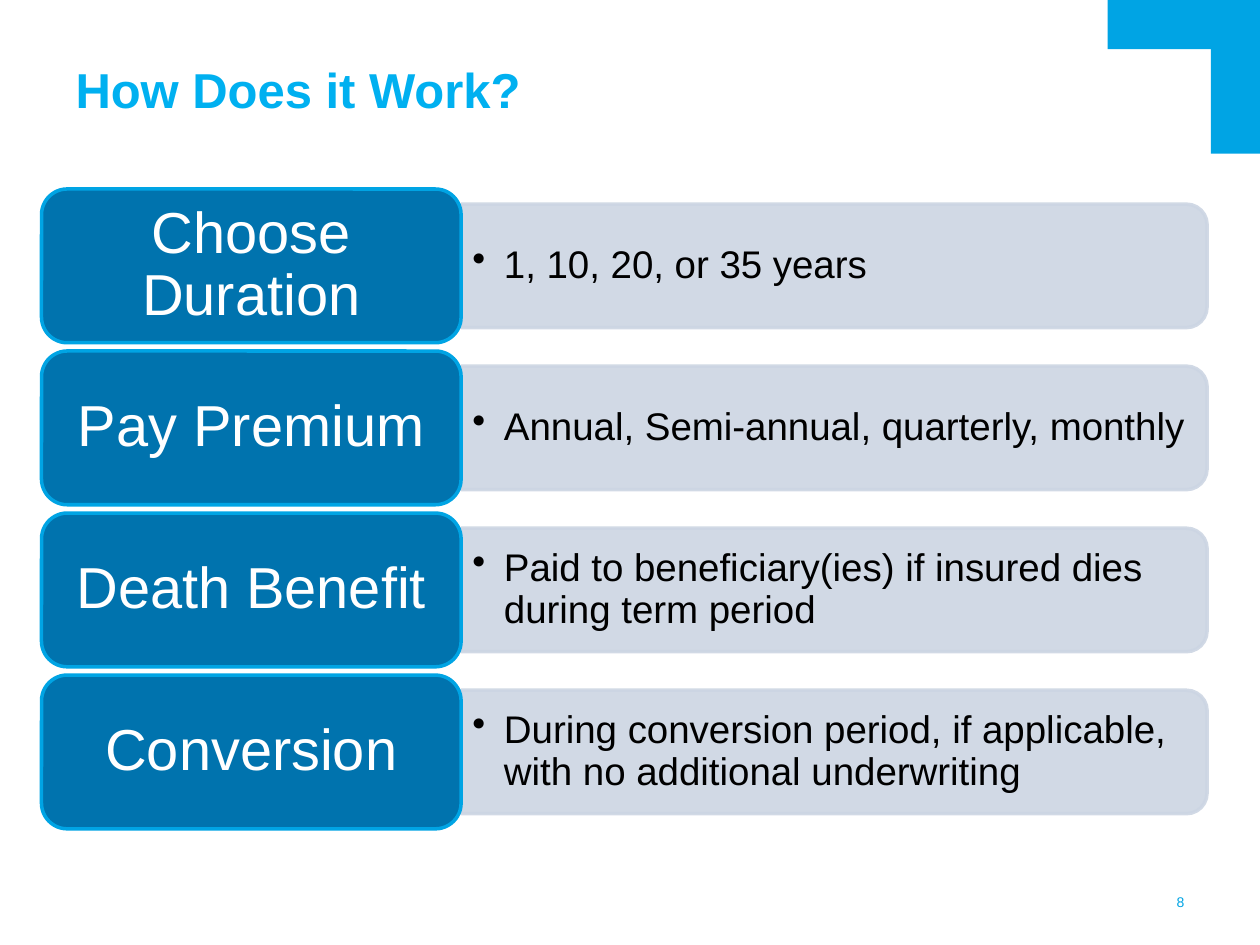
from lxml.etree import SubElement
from pptx import Presentation
from pptx.dml.color import RGBColor
from pptx.enum.shapes import MSO_SHAPE
from pptx.enum.text import MSO_ANCHOR, PP_ALIGN
from pptx.oxml.ns import qn
from pptx.util import Inches, Pt


def paint(shape, fill, line=None, opacity=None):
    """Set fill and outline; opacity is a percentage applied to both."""
    shape.shadow.inherit = False
    shape.fill.solid()
    shape.fill.fore_color.rgb = RGBColor.from_string(fill)
    if line:
        shape.line.color.rgb = RGBColor.from_string(line)
        shape.line.width = Pt(2)
    else:
        shape.line.fill.background()
    if opacity:
        for color in shape._element.spPr.iter(qn("a:srgbClr")):
            SubElement(color, qn("a:alpha"), val=str(opacity * 1000))


def write(shape, text, size, color, anchor=MSO_ANCHOR.MIDDLE,
          align=PP_ALIGN.LEFT, inset=(0, 0), wrap=True):
    """Fill the shape with one paragraph; inset is (horizontal, vertical) in inches."""
    frame = shape.text_frame
    frame.text = text
    frame.word_wrap = wrap
    frame.vertical_anchor = anchor
    frame.margin_left = frame.margin_right = Inches(inset[0])
    frame.margin_top = frame.margin_bottom = Inches(inset[1])
    paragraph = frame.paragraphs[0]
    paragraph.alignment = align
    font = paragraph.runs[0].font
    font.name = "Arial"
    font.size = Pt(size)
    font.color.rgb = RGBColor.from_string(color)
    return paragraph


presentation = Presentation()
presentation.slide_width = Inches(10)
presentation.slide_height = Inches(7.5)
slide = presentation.slides.add_slide(presentation.slide_layouts[6])
shapes = slide.shapes

# Corner ornament
for left, width, height in ((8.79, 1.21, 0.39), (9.61, 0.39, 1.22)):
    corner = shapes.add_shape(MSO_SHAPE.RECTANGLE, Inches(left), 0,
                              Inches(width), Inches(height))
    paint(corner, "00A4E4")

# Title and page number
title = shapes.add_textbox(Inches(0.6), Inches(0.6), Inches(8.8), Inches(0.34))
paragraph = write(title, "How Does it Work?", 28, "00B0F0",
                  anchor=MSO_ANCHOR.BOTTOM, wrap=False)
paragraph.runs[0].font.bold = True

page_number = shapes.add_textbox(Inches(9.09), Inches(7.09), Inches(0.31), Inches(0.14))
write(page_number, "8", 8, "00A4E4", align=PP_ALIGN.RIGHT)

# Steps: a label on the left, its detail in a bar on the right
steps = [
    ("Choose Duration", "1, 10, 20, or 35 years"),
    ("Pay Premium", "Annual, Semi-annual, quarterly, monthly"),
    ("Death Benefit", "Paid to beneficiary(ies) if insured dies during term period"),
    ("Conversion", "During conversion period, if applicable, "
                   "with no additional underwriting"),
]
first_top, row_pitch = 1.5, 1.286
label_left, label_width, label_height = 0.33, 3.33, 1.22
bar_left = label_left + label_width
bar_length, bar_height = 5.92, 0.98
detail_width, detail_height = 5.87, 0.88

for row, (label_text, detail_text) in enumerate(steps):
    top = first_top + row * row_pitch
    middle = top + label_height / 2

    # The bar is an upright shape turned a quarter, so its round end faces right
    bar = shapes.add_shape(MSO_SHAPE.ROUND_2_SAME_RECTANGLE,
                           Inches(bar_left + (bar_length - bar_height) / 2),
                           Inches(middle - bar_length / 2),
                           Inches(bar_height), Inches(bar_length))
    bar.rotation = 90
    paint(bar, "CCD5E3", "CCD5E3", opacity=90)

    detail = shapes.add_textbox(Inches(bar_left), Inches(middle - detail_height / 2),
                                Inches(detail_width), Inches(detail_height))
    paragraph = write(detail, detail_text, 22, "000000", inset=(0.09, 0.05))
    paragraph.line_spacing = 0.9
    properties = paragraph._p.get_or_add_pPr()
    properties.set("marL", str(Inches(0.25)))
    properties.set("indent", str(Inches(-0.25)))
    SubElement(properties, qn("a:buChar"), char="•")

    label = shapes.add_shape(MSO_SHAPE.ROUNDED_RECTANGLE, Inches(label_left), Inches(top),
                             Inches(label_width), Inches(label_height))
    paint(label, "0073AE", "00A4E4")
    paragraph = write(label, label_text, 33, "FFFFFF",
                      align=PP_ALIGN.CENTER, inset=(0.14, 0.07))
    paragraph.line_spacing = 0.9

presentation.save("out.pptx")
